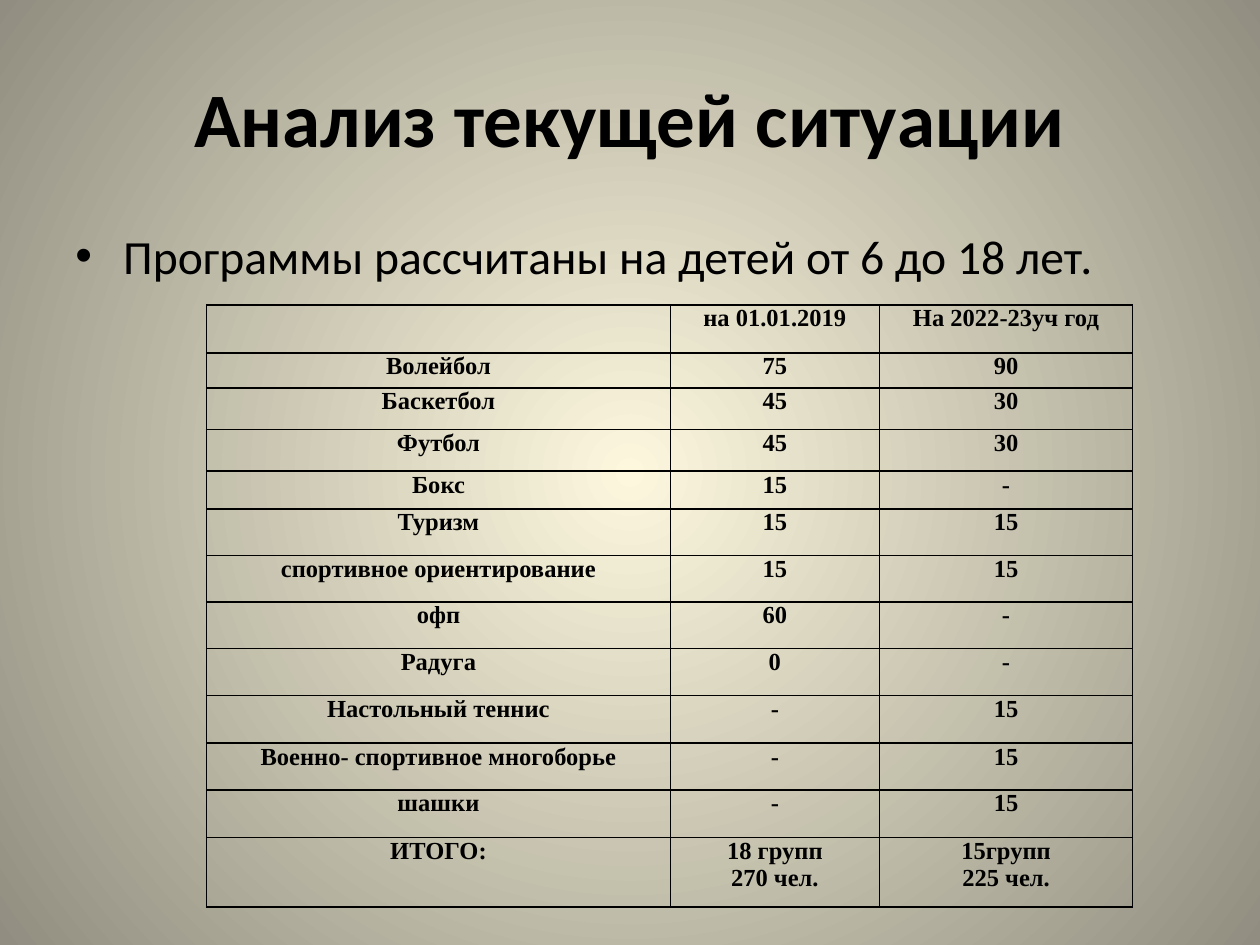
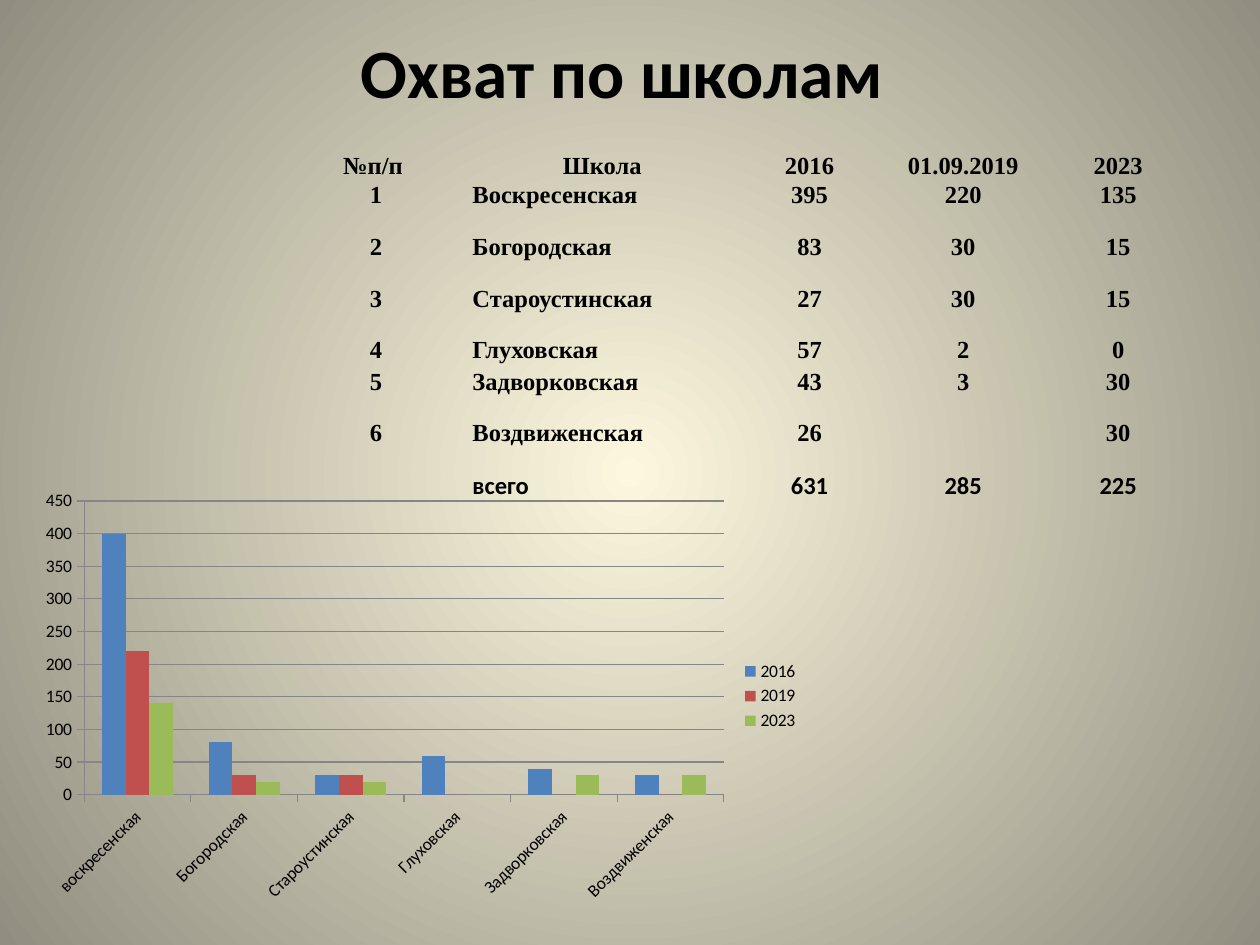
from dataclasses import dataclass
from typing import Any

from lxml import etree
from pptx import Presentation
from pptx.chart.data import CategoryChartData
from pptx.dml.color import RGBColor
from pptx.enum.chart import XL_CHART_TYPE, XL_LEGEND_POSITION, XL_TICK_MARK
from pptx.enum.text import MSO_ANCHOR, PP_ALIGN
from pptx.oxml.ns import qn
from pptx.util import Inches, Pt

COLUMN = XL_CHART_TYPE.COLUMN_CLUSTERED
RIGHT = XL_LEGEND_POSITION.RIGHT
OUT = XL_TICK_MARK.OUTSIDE
MID, TOP = MSO_ANCHOR.MIDDLE, MSO_ANCHOR.TOP
LEFT, CENTER = PP_ALIGN.LEFT, PP_ALIGN.CENTER

SANS, SERIF = "Calibri", "Times New Roman"
BLACK, GLOW, EDGE, GRAY = "000000", "FCF7DD", "918E81", "868686"
BARS = {"2016": "4F81BD", "2019": "C0504D", "2023": "9BBB59"}
PLAIN = "{2D5ABB26-0587-4C30-8999-92F81FD0307C}"

GROUPS = [
    ("", "на 01.01.2019", "На 2022-23уч год"),
    ("Волейбол", "75", "90"),
    ("Баскетбол", "45", "30"),
    ("Футбол", "45", "30"),
    ("Бокс", "15", "-"),
    ("Туризм", "15", "15"),
    ("спортивное ориентирование", "15", "15"),
    ("офп", "60", "-"),
    ("Радуга", "0", "-"),
    ("Настольный теннис", "-", "15"),
    ("Военно- спортивное многоборье", "-", "15"),
    ("шашки", "-", "15"),
    ("ИТОГО:", "18 групп\n270 чел.", "15групп\n225 чел."),
]
SCHOOLS = [
    ("№п/п", "Школа", "2016", "01.09.2019", "2023"),
    (" 1", "Воскресенская", "395", "220", "135"),
    (" 2", "Богородская", "83", "30", "15"),
    (" 3", "Староустинская", "27", "30", "15"),
    (" 4", "Глуховская", "57", "2", "0"),
    (" 5", "Задворковская", "43", "3", "30"),
    (" 6", "Воздвиженская", "26", "", "30"),
    ("", "всего", "631", "285", "225"),
]


@dataclass(frozen=True)
class Box:
    left: float
    top: float
    width: float
    height: float

    def place(self) -> tuple:
        return tuple(map(Inches, (self.left, self.top, self.width, self.height)))


@dataclass(frozen=True)
class Look:
    size: float
    font: str = SANS
    bold: bool = False
    align: Any = CENTER


@dataclass(frozen=True)
class Grid:
    left: float
    top: float
    cols: tuple
    rows: tuple
    data: list
    lined: bool = False
    names: int = -1
    total: str = SERIF

    def box(self) -> Box:
        return Box(self.left, self.top, sum(self.cols), sum(self.rows))

    def look(self, row: int, col: int) -> Look:
        last = row == len(self.rows) - 1
        side = LEFT if col == self.names and row else CENTER
        return Look(14, self.total if last else SERIF, True, side)


def ink(code: str) -> RGBColor:
    return RGBColor.from_string(code)


def adjust(thing: Any, values: dict) -> None:
    for key, value in values.items():
        setattr(thing, key, value)


def style(font: Any, look: Look) -> None:
    adjust(font, {"size": Pt(look.size), "name": look.font, "bold": look.bold})
    font.color.rgb = ink(BLACK)


def write(frame: Any, text: str, look: Look) -> None:
    for num, line in enumerate(text.split("\n")):
        para = frame.add_paragraph() if num else frame.paragraphs[0]
        para.alignment = look.align
        run = para.add_run()
        run.text = line
        style(run.font, look)


def paint(slide: Any) -> None:
    fill = slide.background.fill
    fill.gradient()
    for stop, code in zip(fill.gradient_stops, (GLOW, EDGE)):
        stop.color.rgb = ink(code)
    grad = slide.element.find(".//" + qn("a:gradFill"))
    grad.remove(grad.find(qn("a:lin")))
    ring = etree.SubElement(grad, qn("a:path"), path="circle")
    sides = dict.fromkeys("ltrb", "50000")
    etree.SubElement(ring, qn("a:fillToRect"), sides)


def add_text(slide: Any, box: Box, text: str, look: Look, anchor: Any) -> Any:
    frame = slide.shapes.add_textbox(*box.place()).text_frame
    adjust(frame, {"word_wrap": True, "vertical_anchor": anchor})
    write(frame, text, look)
    return frame


def add_slide(deck: Any, title: str, size: float, height: float) -> Any:
    slide = deck.slides.add_slide(deck.slide_layouts[6])
    paint(slide)
    add_text(slide, Box(0.5, 0.3, 9, height), title, Look(size, bold=True), MID)
    return slide


def add_point(slide: Any, box: Box, text: str) -> None:
    frame = add_text(slide, box, text, Look(27.2, align=LEFT), TOP)
    prop = frame.paragraphs[0]._p.get_or_add_pPr()
    prop.set("marL", str(Inches(0.38)))
    prop.set("indent", str(-Inches(0.38)))
    space = etree.SubElement(prop, qn("a:spcBef"))
    etree.SubElement(space, qn("a:spcPct"), val="20000")
    etree.SubElement(prop, qn("a:buFont"), typeface="Arial")
    etree.SubElement(prop, qn("a:buChar"), char="•")


def outline(cell: Any) -> None:
    prop = cell._tc.get_or_add_tcPr()
    for num, side in enumerate("LRTB"):
        line = etree.Element(qn("a:ln" + side), w=str(Pt(1)))
        fill = etree.SubElement(line, qn("a:solidFill"))
        etree.SubElement(fill, qn("a:srgbClr"), val=BLACK)
        prop.insert(num, line)


def add_grid(slide: Any, grid: Grid) -> None:
    size = len(grid.rows), len(grid.cols)
    table = slide.shapes.add_table(*size, *grid.box().place()).table
    adjust(table, {"first_row": False, "horz_banding": False})
    table._tbl.tblPr.find(qn("a:tableStyleId")).text = PLAIN
    for col, width in zip(table.columns, grid.cols):
        col.width = Inches(width)
    for row, height in zip(table.rows, grid.rows):
        row.height = Inches(height)
    pads = {"margin_left": Inches(0.07), "margin_right": Inches(0.07),
            "margin_top": 0, "margin_bottom": 0}
    for r, line in enumerate(grid.data):
        for c, text in enumerate(line):
            cell = table.cell(r, c)
            adjust(cell, pads)
            cell.fill.background()
            write(cell.text_frame, text, grid.look(r, c))
            if grid.lined:
                outline(cell)


def add_bars(slide: Any, box: Box) -> None:
    body = SCHOOLS[1:-1]
    data = CategoryChartData()
    first, *rest = [row[1] for row in body]
    data.categories = [first.lower(), *rest]
    for col, name in enumerate(BARS, 2):
        data.add_series(name, [round(int(row[col] or 0), -1) for row in body])
    chart = slide.shapes.add_chart(COLUMN, *box.place(), data).chart
    adjust(chart, {"has_title": False, "has_legend": True})
    adjust(chart.legend, {"position": RIGHT, "include_in_layout": False})
    cat, val = chart.category_axis, chart.value_axis
    adjust(val, {"minimum_scale": 0, "maximum_scale": 450, "major_unit": 50,
                 "has_major_gridlines": True})
    for axis in (cat, val):
        axis.major_tick_mark = OUT
        axis.format.line.color.rgb = ink(GRAY)
    val.major_gridlines.format.line.color.rgb = ink(GRAY)
    for part in (chart, chart.legend, cat.tick_labels, val.tick_labels):
        style(part.font, Look(10))
    cat._element.find(".//" + qn("a:bodyPr")).set("rot", "-2700000")
    plot = chart.plots[0]
    adjust(plot, {"gap_width": 150, "overlap": 0, "vary_by_categories": False})
    for bar, code in zip(plot.series, BARS.values()):
        bar.format.fill.solid()
        bar.format.fill.fore_color.rgb = ink(code)


def main() -> None:
    deck = Presentation()
    adjust(deck, {"slide_width": Inches(10), "slide_height": Inches(7.5)})

    slide = add_slide(deck, "Анализ текущей ситуации", 44, 1.25)
    add_point(slide, Box(0.5, 1.75, 9, 0.83),
              "Программы рассчитаны на детей от 6 до 18 лет.")
    high = (0.38, 0.28, 0.33, 0.33, 0.3, *[0.37] * 4, *[0.38, 0.37, 0.38], 0.55)
    add_grid(slide, Grid(1.64, 2.42, (3.68, 1.66, 2.01), high, GROUPS, lined=True))

    slide = add_slide(deck, "Охват по школам ", 39.6, 0.53)
    add_bars(slide, Box(0.24, 3.83, 6.2, 3.39))
    high = (0.23, *[0.41] * 3, 0.25, *[0.41] * 2, 0.23)
    add_grid(slide, Grid(2.24, 1.21, (1.44, 2.2, 1.09, 1.35, 1.11), high,
                         SCHOOLS, names=1, total=SANS))

    deck.save("out.pptx")


if __name__ == "__main__":
    main()
